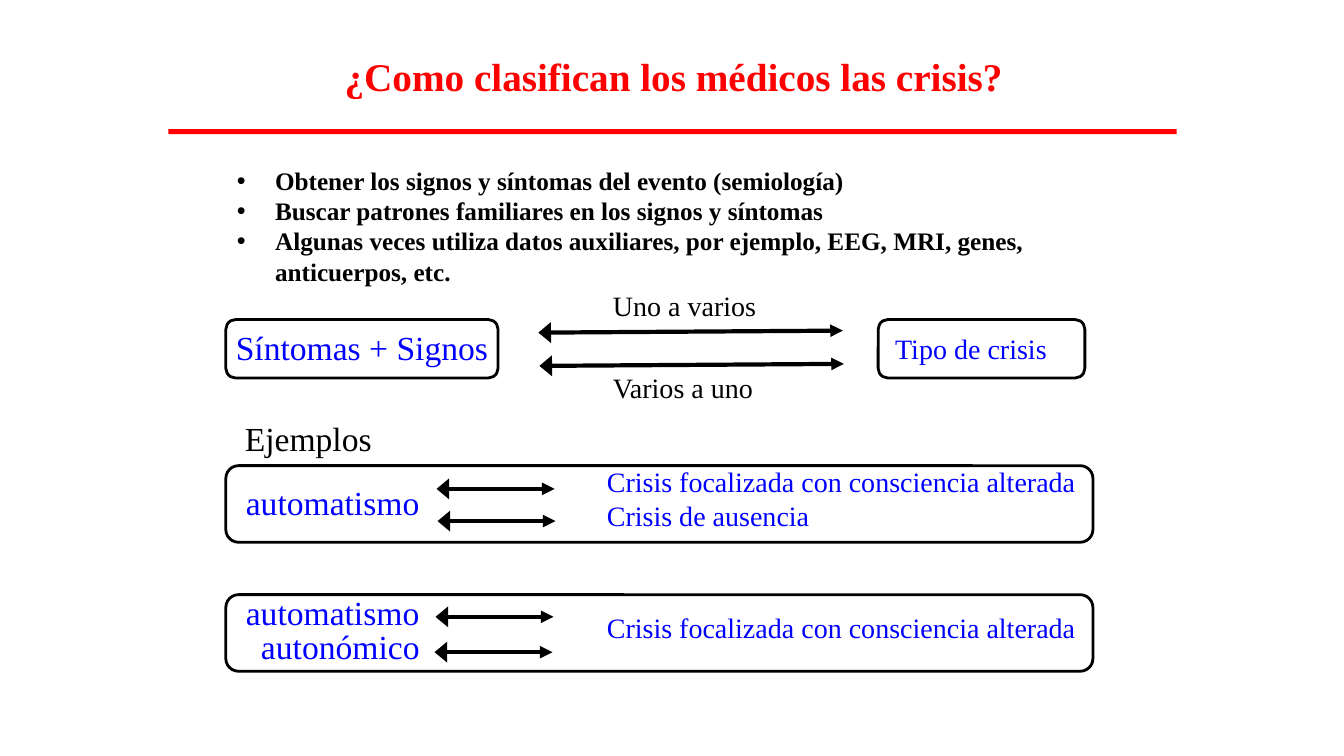
from lxml import etree
from pptx import Presentation
from pptx import util as u
from pptx.dml.color import RGBColor
from pptx.enum import shapes, text
from pptx.oxml import ns

PX = 9144  # 100 px to the inch
RED = RGBColor(0xFF, 0, 0)
BLUE = RGBColor(0, 0, 0xFF)
BLACK = RGBColor(0, 0, 0)
FONT = "Times New Roman"


def px(*sizes):
    return [u.Emu(size * PX) for size in sizes]


def style(para, size, color, bold=False):
    for run in para.runs:
        font = run.font
        font.name, font.size, font.bold = FONT, u.Pt(size), bold
        font.color.rgb = color


def label(slide, box, words, size, color, bold=False, wrap=False):
    frame = slide.shapes.add_textbox(*px(*box)).text_frame
    frame.word_wrap = wrap
    frame.auto_size = text.MSO_AUTO_SIZE.SHAPE_TO_FIT_TEXT
    frame.text = words
    for para in frame.paragraphs:
        style(para, size, color, bold)
    return frame


def frame_box(slide, box):
    """Draw an empty rounded outline."""
    shape = slide.shapes.add_shape(shapes.MSO_SHAPE.ROUNDED_RECTANGLE, *px(*box))
    shape.shadow.inherit = False
    shape.fill.background()
    shape.line.color.rgb = BLACK
    shape.line.width = u.Pt(2)


def arrow(slide, x, y, width, rise=0):
    """Draw a two-headed arrow, wider at its left end."""
    link = slide.shapes.add_connector(
        shapes.MSO_CONNECTOR.STRAIGHT, *px(x, y, x + width, y - rise))
    link.line.color.rgb = BLACK
    link.line.width = u.Pt(3)
    line = link.line._get_or_add_ln()
    for end, broad in (("headEnd", "lg"), ("tailEnd", "med")):
        etree.SubElement(line, ns.qn("a:" + end), type="triangle", w=broad, len="med")
    etree.SubElement(link._element.spPr, ns.qn("a:effectLst"))


def header(slide, x, y, width):
    label(slide, (x + 165, y, 673, 57), "¿Como clasifican los médicos las crisis?",
          28, RED, bold=True)
    rule = slide.shapes.add_shape(shapes.MSO_SHAPE.RECTANGLE, *px(x, y + 81, width, 5))
    rule.shadow.inherit = False
    rule.fill.solid()
    rule.fill.fore_color.rgb = RED
    rule.line.fill.background()


def steps(slide, box):
    frame = label(slide, box, "\n".join((
        "Obtener los signos y síntomas del evento (semiología)",
        "Buscar patrones familiares en los signos y síntomas",
        "Algunas veces utiliza datos auxiliares, por ejemplo, EEG, MRI, genes, "
        "anticuerpos, etc.")), 18, BLACK, bold=True, wrap=True)
    for para in frame.paragraphs:
        props = para._p.get_or_add_pPr()
        props.set("marL", str(38 * PX))
        props.set("indent", str(-38 * PX))
        etree.SubElement(props, ns.qn("a:buFont"), typeface="Arial")
        etree.SubElement(props, ns.qn("a:buChar"), char="•")


def relation(slide, x, y):
    """Link the symptoms to the seizure type, both ways."""
    frame_box(slide, (x, y, 270, 58))
    label(slide, (x, y + 2, 326, 50), "Síntomas + Signos", 24, BLUE, wrap=True)
    frame_box(slide, (x + 647, y, 205, 58))
    label(slide, (x + 654, y + 7, 190, 44), "Tipo de crisis", 20, BLUE, wrap=True)
    label(slide, (x + 374, y - 36, 163, 44), "Uno a varios", 20, BLACK)
    label(slide, (x + 374, y + 46, 160, 44), "Varios a uno", 20, BLACK)
    for row in range(2):
        arrow(slide, x + 310 + row, y + 13 + 33 * row, 302, rise=2)


def example(slide, x, y, signs, types, arrows):
    """Frame one example; each sign is (dx, dy, width, words), each type (dy, width, words)."""
    frame_box(slide, (x, y, 860, 76))
    for dx, dy, width, words in signs:
        label(slide, (x + dx, y + dy, width, 50), words, 24, BLUE)
    for dy, width, words in types:
        label(slide, (x + 368, y + dy, width, 44), words, 20, BLUE)
    for dx, dy in arrows:
        arrow(slide, x + dx, y + dy, 117)


def main():
    deck = Presentation()
    deck.slide_width, deck.slide_height = px(1333, 750)
    slide = deck.slides.add_slide(deck.slide_layouts[6])
    focal = "Crisis focalizada con consciencia alterada"
    header(slide, 167, 47, 1000)
    steps(slide, (225, 159, 908, 131))
    relation(slide, 224, 317)
    label(slide, (233, 410, 147, 50), "Ejemplos", 24, BLACK)
    example(slide, 224, 462, [(10, 11, 194, "automatismo")],
            [(-6, 488, focal), (28, 222, "Crisis de ausencia")],
            [(209, 23), (210, 55)])
    example(slide, 224, 590,
            [(10, -8, 194, "automatismo"), (25, 26, 179, "autonómico")],
            [(11, 488, focal)], [(208, 22), (207, 57)])
    deck.save("out.pptx")


if __name__ == "__main__":
    main()
